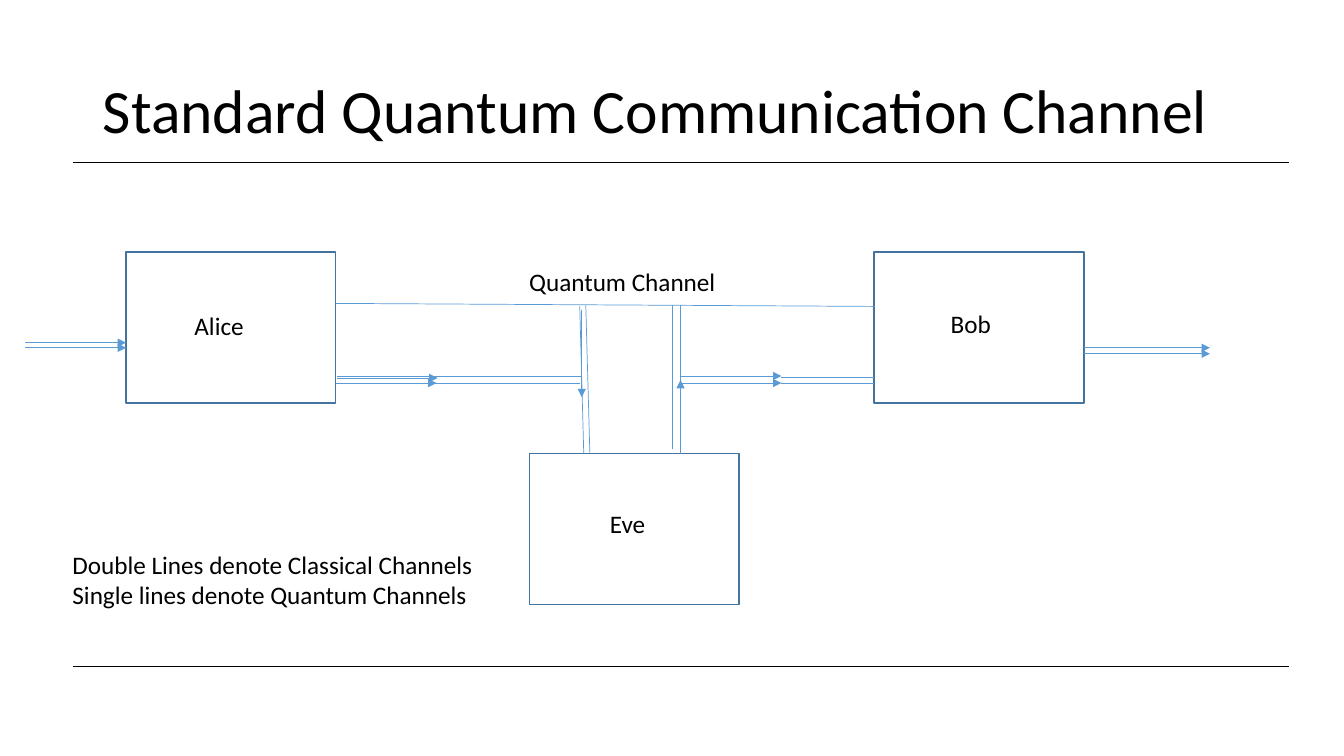
from dataclasses import dataclass

from lxml.etree import SubElement
from pptx import Presentation
from pptx.dml.color import RGBColor
from pptx.enum.shapes import MSO_CONNECTOR, MSO_SHAPE
from pptx.enum.text import MSO_ANCHOR, MSO_AUTO_SIZE, PP_ALIGN
from pptx.oxml.ns import qn
from pptx.util import Inches, Pt


@dataclass(frozen=True)
class Theme:
    font: str = "Calibri"
    ink: str = "000000"
    border: str = "43739E"
    channel: str = "5B9BD5"
    title_size: float = 44
    body_size: float = 18
    border_width: float = 1
    channel_width: float = 0.5
    rule_width: float = 0.75


THEME = Theme()
TITLE = "Standard Quantum Communication Channel"
TITLE_AREA = (0.92, 0.4, 11.5, 1.45)
PARTY_SIZE = (2.08, 1.5)
PARTIES = [
    ("Alice", (1.25, 2.5), (1.83, 3.03)),
    ("Bob", (8.67, 2.5), (9.33, 3.01)),
    ("Eve", (5.25, 4.5), (5.95, 4.99)),
]
PARTY_LABEL_SIZE = (1.08, 0.42)
CAPTIONS = [
    (["Quantum Channel"], (5.15, 2.59, 2.6, 0.4), True),
    (["Double Lines denote Classical Channels",
      "Single lines denote Quantum Channels"], (0.62, 5.4, 4.22, 0.71), False),
]
QUANTUM_LINE = (3.33, 3.01, 8.67, 3.04)
CLASSICAL_LINES = [
    (3.34, 3.73, 5.76, 3.73),
    (3.33, 3.8, 5.75, 3.8),
    (5.75, 3.04, 5.79, 4.5),
    (5.81, 3.03, 5.85, 4.49),
    (6.67, 3.03, 6.67, 4.45),
    (6.75, 3.03, 6.75, 4.5),
    (7.75, 3.74, 8.67, 3.74),
    (7.75, 3.8, 8.67, 3.8),
]
CLASSICAL_ARROWS = [
    (0.25, 3.4, 1.25, 3.4),
    (0.25, 3.45, 1.25, 3.45),
    (3.34, 3.75, 4.34, 3.75),
    (3.33, 3.8, 4.33, 3.8),
    (5.77, 3.08, 5.77, 3.94),
    (6.75, 4.5, 6.75, 3.77),
    (6.75, 3.73, 7.75, 3.73),
    (6.75, 3.8, 7.75, 3.8),
    (10.75, 3.45, 12, 3.45),
    (10.75, 3.51, 12, 3.51),
]
RULE_SPAN = (0.72, 12.78)
RULE_HEIGHTS = (1.61, 6.61)


def inches(values):
    return [Inches(value) for value in values]


def add_run(paragraph, text, size):
    run = paragraph.add_run()
    run.text = text
    run.font.name = THEME.font
    run.font.size = Pt(size)
    run.font.color.rgb = RGBColor.from_string(THEME.ink)


def add_title(slide):
    title = slide.shapes.title
    title.left, title.top, title.width, title.height = inches(TITLE_AREA)
    frame = title.text_frame
    frame.vertical_anchor = MSO_ANCHOR.MIDDLE
    frame.auto_size = MSO_AUTO_SIZE.NONE
    paragraph = frame.paragraphs[0]
    paragraph.alignment = PP_ALIGN.LEFT
    paragraph.line_spacing = 0.9
    add_run(paragraph, TITLE, THEME.title_size)


def add_caption(slide, lines, area, wrap=True):
    frame = slide.shapes.add_textbox(*inches(area)).text_frame
    frame.word_wrap = wrap
    frame.auto_size = MSO_AUTO_SIZE.SHAPE_TO_FIT_TEXT
    for index, line in enumerate(lines):
        paragraph = frame.add_paragraph() if index else frame.paragraphs[0]
        add_run(paragraph, line, THEME.body_size)


def add_party(slide, name, corner, label_corner):
    party = slide.shapes.add_shape(MSO_SHAPE.RECTANGLE, *inches(corner + PARTY_SIZE))
    party.shadow.inherit = False
    party.fill.background()
    party.line.color.rgb = RGBColor.from_string(THEME.border)
    party.line.width = Pt(THEME.border_width)
    add_caption(slide, [name], label_corner + PARTY_LABEL_SIZE)


def add_line(slide, ends, color, width, arrow=False):
    connector = slide.shapes.add_connector(MSO_CONNECTOR.STRAIGHT, *inches(ends))
    connector.line.color.rgb = RGBColor.from_string(color)
    connector.line.width = Pt(width)
    properties = connector._element.spPr
    if arrow:
        SubElement(properties.find(qn("a:ln")), qn("a:tailEnd"), type="triangle")
    SubElement(properties, qn("a:effectLst"))


def main():
    presentation = Presentation()
    presentation.slide_width = Inches(13.33)
    presentation.slide_height = Inches(7.5)
    slide = presentation.slides.add_slide(presentation.slide_layouts[5])

    add_title(slide)
    for party in PARTIES:
        add_party(slide, *party)
    for ends in [QUANTUM_LINE] + CLASSICAL_LINES:
        add_line(slide, ends, THEME.channel, THEME.channel_width)
    for ends in CLASSICAL_ARROWS:
        add_line(slide, ends, THEME.channel, THEME.channel_width, arrow=True)
    for caption in CAPTIONS:
        add_caption(slide, *caption)
    left, right = RULE_SPAN
    for height in RULE_HEIGHTS:
        add_line(slide, (left, height, right, height), THEME.ink, THEME.rule_width)

    presentation.save("out.pptx")


if __name__ == "__main__":
    main()
